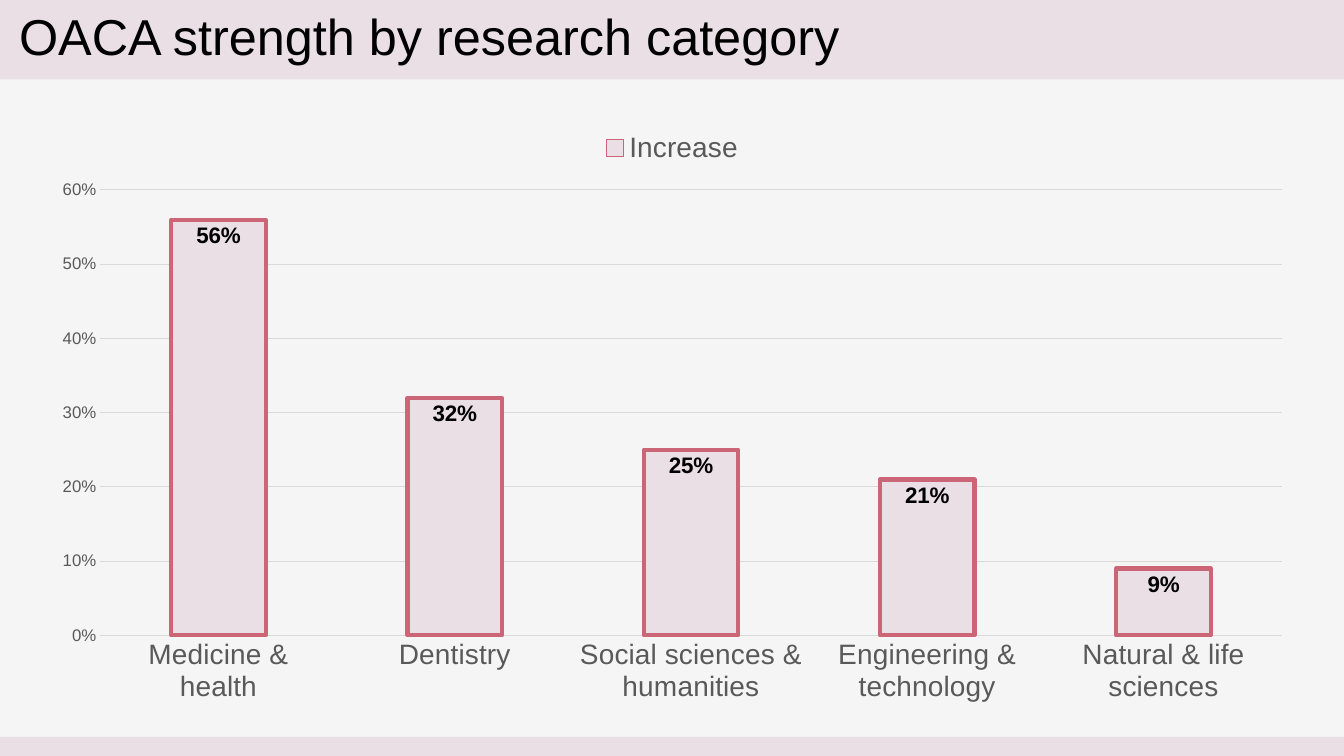
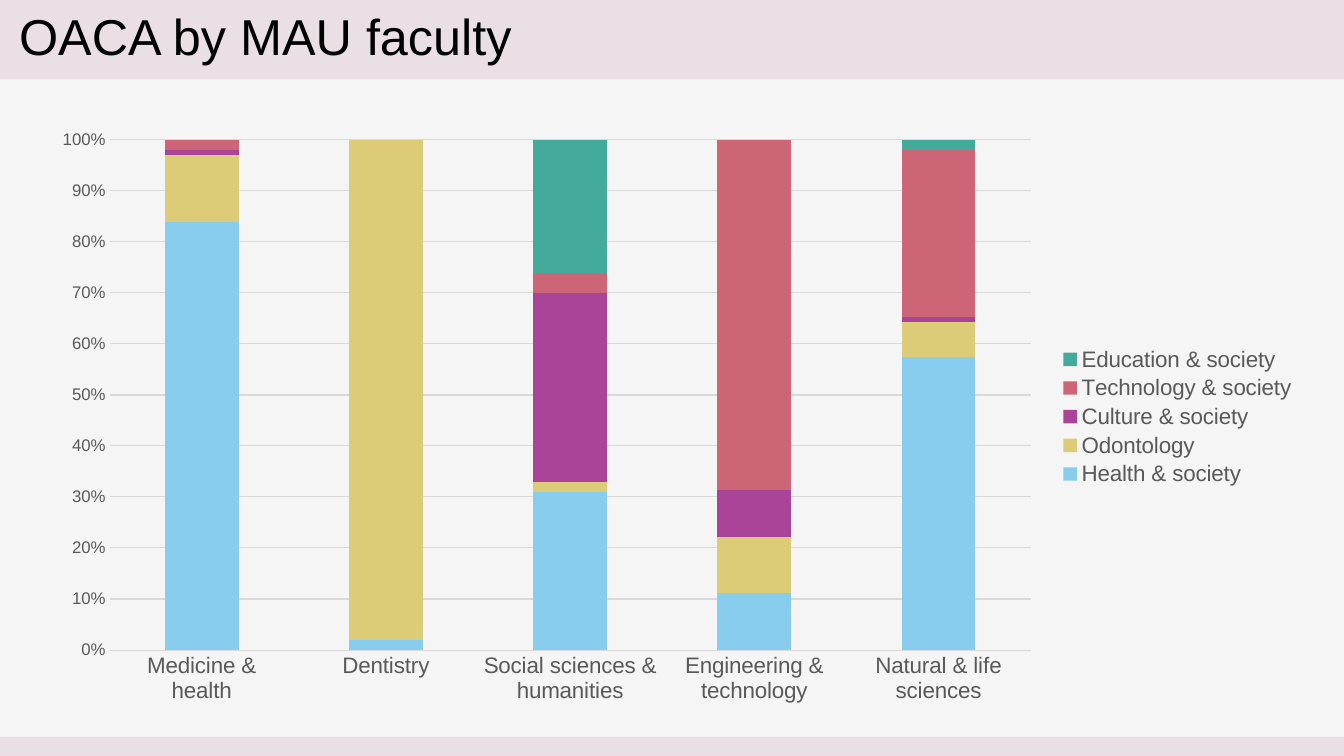
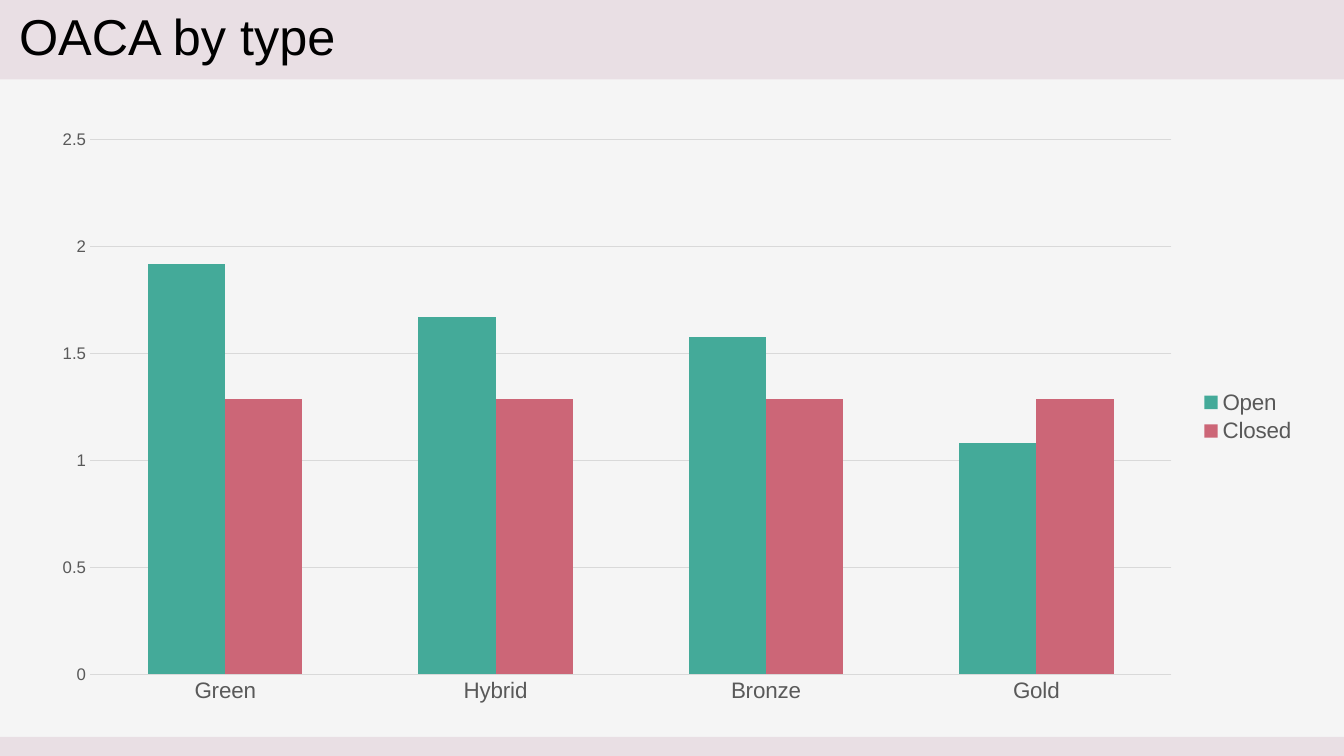
from lxml import etree
from pptx import Presentation
from pptx.chart.data import CategoryChartData
from pptx.dml.color import RGBColor
from pptx.enum.chart import XL_CHART_TYPE, XL_LABEL_POSITION, XL_LEGEND_POSITION, XL_TICK_MARK
from pptx.enum.shapes import MSO_SHAPE
from pptx.enum.text import MSO_ANCHOR, MSO_AUTO_SIZE, PP_ALIGN
from pptx.oxml.ns import qn
from pptx.util import Cm, Pt

STACKED = XL_CHART_TYPE.COLUMN_STACKED
SHARES = XL_CHART_TYPE.COLUMN_STACKED_100
CLUSTERED = XL_CHART_TYPE.COLUMN_CLUSTERED
TOP = XL_LEGEND_POSITION.TOP
RIGHT = XL_LEGEND_POSITION.RIGHT
INSIDE = XL_LABEL_POSITION.INSIDE_END
NO_TICK = XL_TICK_MARK.NONE
RECT = MSO_SHAPE.RECTANGLE
MIDDLE = MSO_ANCHOR.MIDDLE
LEFT = PP_ALIGN.LEFT
NO_FIT = MSO_AUTO_SIZE.NONE

COLORS = {
    "page": "F5F5F5",
    "band": "882255",
    "black": "000000",
    "label": "595959",
    "grid": "D9D9D9",
    "blush": "EADFE5",
    "rose": "CC6677",
    "sky": "88CCEE",
    "sand": "DDCC77",
    "plum": "AA4499",
    "teal": "44AA99",
}
FONT = "Arial"
WIDTH, HEIGHT = Cm(33.87), Cm(19.05)
HEAD, FOOT = Cm(2), Cm(0.48)
FRAME = Cm(0.94), Cm(3), Cm(32), Cm(15)

FIELDS = [
    "Medicine & health",
    "Dentistry",
    "Social sciences & humanities",
    "Engineering & technology",
    "Natural & life sciences",
]


def color(name):
    return RGBColor.from_string(COLORS[name])


def paint(fill, name):
    fill.solid()
    fill.fore_color.rgb = color(name)


def style_font(font, size, name, bold=False):
    font.name = FONT
    font.size = Pt(size)
    font.bold = bold
    font.color.rgb = color(name)


def style_line(line, name, width=0.75):
    paint(line.fill, name)
    line.width = Pt(width)


def tint(shape):
    """Fill a shape with the band colour at 10 % opacity."""
    paint(shape.fill, "band")
    shade = shape.element.spPr.find(".//" + qn("a:srgbClr"))
    etree.SubElement(shade, qn("a:alpha")).set("val", "10000")


def add_foot(slide):
    """Draw the bottom band and move it to the layout, so every slide shows it."""
    band = slide.shapes.add_shape(RECT, 0, HEIGHT - FOOT, WIDTH, FOOT)
    band.shadow.inherit = False
    band.line.fill.background()
    tint(band)
    slide.slide_layout.shapes.element.append(band.element)


def add_slide(deck, text):
    slide = deck.slides.add_slide(deck.slide_layouts[5])
    title = slide.shapes.title
    title.left, title.top, title.width, title.height = 0, 0, WIDTH, HEAD
    tint(title)
    frame = title.text_frame
    frame.text = text
    frame.auto_size = NO_FIT
    frame.word_wrap = True
    frame.vertical_anchor = MIDDLE
    frame.margin_left = Cm(0.48)
    line = frame.paragraphs[0]
    line.alignment = LEFT
    line.line_spacing = 0.9
    style_font(line.runs[0].font, 36, "black")
    return slide


def style_axes(chart, size, form, top, step):
    base, scale = chart.category_axis, chart.value_axis
    for axis, points in ((base, size), (scale, 12)):
        axis.major_tick_mark = axis.minor_tick_mark = NO_TICK
        style_font(axis.tick_labels.font, points, "label")
    style_line(base.format.line, "grid")
    scale.format.line.fill.background()
    scale.has_major_gridlines = True
    style_line(scale.major_gridlines.format.line, "grid")
    scale.tick_labels.number_format = form
    scale.tick_labels.number_format_is_linked = False
    scale.minimum_scale = 0
    scale.maximum_scale = top
    scale.major_unit = step


def add_chart(slide, kind, cats, series, size=16, place=RIGHT,
              form="0%", top=None, step=None):
    """Add a column chart; series holds (name, colour, values)."""
    data = CategoryChartData()
    data.categories = cats
    for name, _, values in series:
        data.add_series(name, values)
    chart = slide.shapes.add_chart(kind, *FRAME, data).chart
    style_font(chart.font, 10, "black")
    chart.has_title = False
    style_axes(chart, size, form, top, step)

    chart.has_legend = True
    chart.legend.position = place
    chart.legend.include_in_layout = False
    style_font(chart.legend.font, size, "label")

    plot = chart.plots[0]
    plot.vary_by_categories = False
    plot.gap_width = 150
    plot.overlap = 0 if kind == CLUSTERED else 100
    for bars, (_, shade, _) in zip(plot.series, series):
        bars.invert_if_negative = False
        paint(bars.format.fill, shade)
    return chart


def mark_bars(chart):
    """Outline the bars and write their values inside the top end."""
    bars = chart.plots[0].series[0]
    style_line(bars.format.line, "rose", 3)
    labels = bars.data_labels
    labels.show_value = True
    labels.position = INSIDE
    labels.number_format = "0%"
    labels.number_format_is_linked = False
    style_font(labels.font, 16, "black", bold=True)


def main():
    deck = Presentation()
    deck.slide_width, deck.slide_height = WIDTH, HEIGHT
    paint(deck.slide_master.background.fill, "page")

    slide = add_slide(deck, "OACA strength by research category")
    add_foot(slide)
    growth = [("Increase", "blush", (0.56, 0.32, 0.25, 0.21, 0.09))]
    mark_bars(add_chart(slide, STACKED, FIELDS, growth, size=20, place=TOP,
                        top=0.6, step=0.1))

    slide = add_slide(deck, "OACA by MAU faculty")
    add_chart(slide, SHARES, FIELDS, [
        ("Health & society", "sky", (83, 2, 31, 11, 58)),
        ("Odontology", "sand", (13, 98, 2, 11, 7)),
        ("Culture & society", "plum", (1, 0, 37, 9, 1)),
        ("Technology & society", "rose", (2, 0, 4, 68, 33)),
        ("Education & society", "teal", (0, 0, 26, 0, 2)),
    ])

    slide = add_slide(deck, "OACA by type")
    add_chart(slide, CLUSTERED, ["Green", "Hybrid", "Bronze", "Gold"], [
        ("Open", "teal", (1.92, 1.67, 1.58, 1.08)),
        ("Closed", "rose", (1.29, 1.29, 1.29, 1.29)),
    ], form="General", top=2.5, step=0.5)

    deck.save("out.pptx")


if __name__ == "__main__":
    main()
